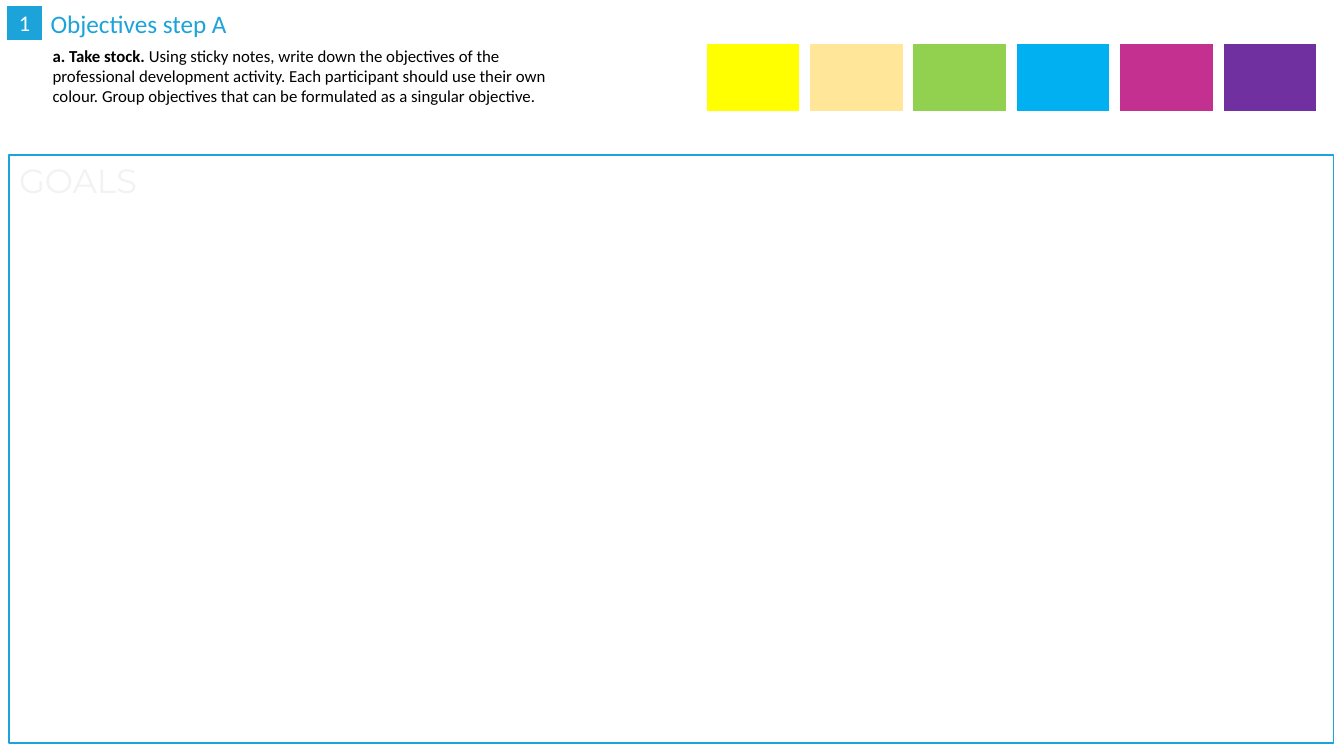
from lxml.etree import SubElement
from pptx import Presentation
from pptx.dml.color import RGBColor
from pptx.enum.shapes import MSO_SHAPE
from pptx.enum.text import MSO_ANCHOR, MSO_AUTO_SIZE, PP_ALIGN
from pptx.oxml.ns import qn
from pptx.util import Cm, Pt

ACCENT = "1CA3DA"
WHITE = "FFFFFF"
NOTE_COLOURS = ["FFFF00", "FFE699", "92D050", "00B0F0", "C4308F", "7030A0"]


def colour(hex_string):
    return RGBColor.from_string(hex_string)


def place(shape, left, top, width, height):
    shape.left, shape.top = Cm(left), Cm(top)
    shape.width, shape.height = Cm(width), Cm(height)


def add_box(slide, box, fill, outline, outline_width):
    rectangle = slide.shapes.add_shape(MSO_SHAPE.RECTANGLE, *map(Cm, box))
    rectangle.shadow.inherit = False
    if fill:
        rectangle.fill.solid()
        rectangle.fill.fore_color.rgb = colour(fill)
    else:
        rectangle.fill.background()
    rectangle.line.color.rgb = colour(outline)
    rectangle.line.width = Pt(outline_width)
    return rectangle


def format_text(shape, size, text_colour, align=PP_ALIGN.LEFT,
                anchor=MSO_ANCHOR.TOP, font="Calibri"):
    frame = shape.text_frame
    frame.word_wrap = True
    frame.auto_size = MSO_AUTO_SIZE.NONE
    frame.vertical_anchor = anchor
    paragraph = frame.paragraphs[0]
    paragraph.alignment = align
    paragraph.line_spacing = 1.0
    paragraph.space_before = Pt(0)
    for run in paragraph.runs:
        run.font.name = font
        run.font.size = Pt(size)
        run.font.color.rgb = colour(text_colour)


def add_heading(slide, box):
    left, top, width, height = box

    # Step number
    step = add_box(slide, (left, top, 0.94, 0.89), ACCENT, WHITE, 1)
    step.text_frame.text = "1"
    format_text(step, 16, WHITE, PP_ALIGN.CENTER, MSO_ANCHOR.MIDDLE)

    # Step title
    title = slide.shapes.title
    place(title, left + 0.87, top - 0.05, width - 0.87, 1.02)
    title.text_frame.text = "Objectives step A"
    format_text(title, 18, ACCENT)

    # Instruction with a bold lead-in and no bullet
    instruction = slide.placeholders[1]
    place(instruction, left + 0.92, top + 0.89, width - 0.87, height - 0.89)
    paragraph = instruction.text_frame.paragraphs[0]
    lead = paragraph.add_run()
    lead.text = "a. Take stock. "
    detail = paragraph.add_run()
    detail.text = (
        "Using sticky notes, write down the objectives of the professional "
        "development activity. Each participant should use their own colour. "
        "Group objectives that can be formulated as a singular objective."
    )
    format_text(instruction, 12, "000000")
    lead.font.bold = True
    properties = paragraph._p.get_or_add_pPr()
    properties.set("marL", "0")
    properties.set("indent", "0")
    SubElement(properties, qn("a:buNone"))


def add_goals_area(slide, box):
    goals = add_box(slide, box, None, ACCENT, 1)
    goals.text_frame.text = "GOALS"
    format_text(goals, 24, "F2F2F2", font="Montserrat")


def add_sticky_notes(slide, box):
    left, top, width, height = box
    note_width = 2.39
    pitch = (width - note_width) / (len(NOTE_COLOURS) - 1)
    for index, note_colour in enumerate(NOTE_COLOURS):
        note_box = (left + index * pitch, top, note_width, height)
        add_box(slide, note_box, note_colour, WHITE, 1.5)


def main():
    presentation = Presentation()
    presentation.slide_width = Cm(33.87)
    presentation.slide_height = Cm(19.05)
    slide = presentation.slides.add_slide(presentation.slide_layouts[1])
    add_heading(slide, (0.15, 0.13, 14.1, 2.69))
    add_goals_area(slide, (0.23, 3.91, 33.38, 14.81))
    add_sticky_notes(slide, (17.78, 1.09, 15.42, 1.73))
    presentation.save("out.pptx")


if __name__ == "__main__":
    main()
